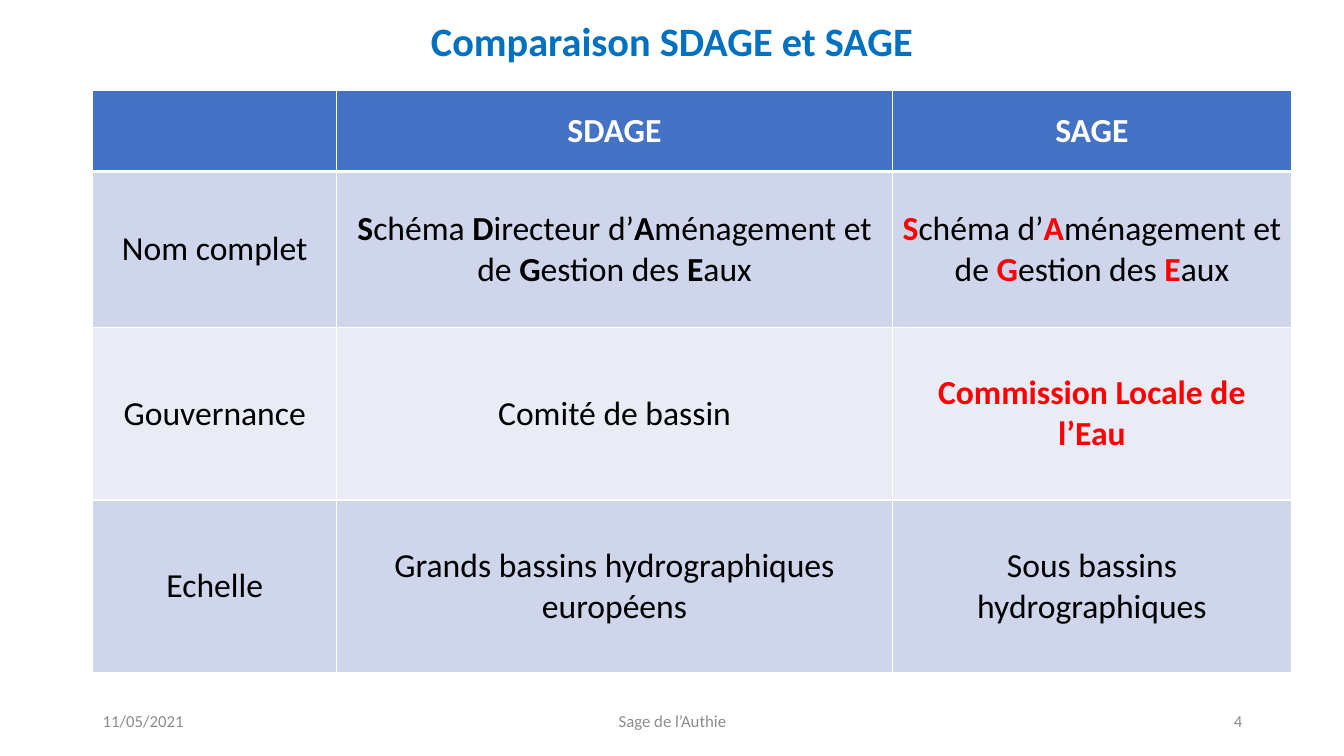
from pptx import Presentation
from pptx.dml.color import RGBColor
from pptx.enum.text import MSO_ANCHOR as Anchor, PP_ALIGN as Align
from pptx.util import Inches, Pt
from pptx.oxml import parse_xml
from pptx.oxml.ns import nsdecls

# Content: text between asterisks is emphasised
TITLE = "Comparaison SDAGE et SAGE"
COMPARISON = [
    ["", "SDAGE", "SAGE"],
    ["Nom complet",
     "*S*chéma *D*irecteur d’*A*ménagement et de *G*estion des *E*aux",
     "*S*chéma d’*A*ménagement et de *G*estion des *E*aux"],
    ["Gouvernance", "Comité de bassin", "*Commission Locale de l’Eau*"],
    ["Echelle", "Grands bassins hydrographiques européens",
     "Sous bassins hydrographiques"],
]
FOOTER = [  # text, left, width, alignment
    ("11/05/2021", 0.92, 3, Align.LEFT),
    ("Sage de l’Authie", 4.42, 4.5, Align.CENTER),
    ("4", 9.42, 3, Align.RIGHT),
]
COLUMN_WIDTHS = [2.42, 5.51, 3.96]
ROW_HEIGHTS = [0.8, 1.55, 1.71, 1.71]
SAGE_COLUMN = 2

THEME = {
    "font": "Calibri",
    "title_size": 28.8, "table_size": 24, "footer_size": 12,
    "title": "0070C0", "footer": "8C8C8C", "text": "000000",
    "accent": "FF0000", "header": "4472C4", "header_text": "FFFFFF",
    "bands": ["E9EBF5", "CFD5EA"], "border": "FFFFFF",
}


def color(key):
    return RGBColor.from_string(THEME[key])


def write(frame, text, size, ink, align, bold=False, accent=None):
    """Fill a frame with one paragraph, emphasising the starred parts."""
    paragraph = frame.paragraphs[0]
    paragraph.alignment = align
    paragraph.font.name = THEME["font"]
    paragraph.font.size = Pt(THEME[size])
    paragraph.font.bold = bold
    paragraph.font.color.rgb = color(ink)
    for index, part in enumerate(text.split("*")):
        if not part:
            continue
        run = paragraph.add_run()
        run.text = part
        if index % 2:
            run.font.bold = True
            run.font.color.rgb = color(accent or ink)


def add_label(slide, text, box, *style, **options):
    frame = slide.shapes.add_textbox(*map(Inches, box)).text_frame
    frame.word_wrap = True
    frame.vertical_anchor = Anchor.MIDDLE
    write(frame, text, *style, **options)


def add_borders(cell, top, bottom):
    properties = cell._tc.get_or_add_tcPr()
    widths = {"lnL": 1, "lnR": 1, "lnT": top, "lnB": bottom}
    for index, (side, width) in enumerate(widths.items()):
        properties.insert(index, parse_xml(
            f'<a:{side} {nsdecls("a")} w="{Pt(width)}"><a:solidFill>'
            f'<a:srgbClr val="{THEME["border"]}"/></a:solidFill></a:{side}>'))


prs = Presentation()
prs.slide_width, prs.slide_height = Inches(13.33), Inches(7.5)
slide = prs.slides.add_slide(prs.slide_layouts[6])

# Footer and title
for text, left, width, align in FOOTER:
    add_label(slide, text, (left, 6.95, width, 0.4), "footer_size", "footer", align)
add_label(slide, TITLE, (0.72, 0.15, 11.89, 0.5), "title_size", "title",
          Align.CENTER, bold=True)

# Comparison table
table = slide.shapes.add_table(
    len(ROW_HEIGHTS), len(COLUMN_WIDTHS), Inches(0.92), Inches(0.9),
    Inches(sum(COLUMN_WIDTHS)), Inches(sum(ROW_HEIGHTS))).table
for column, width in zip(table.columns, COLUMN_WIDTHS):
    column.width = Inches(width)
for table_row, height in zip(table.rows, ROW_HEIGHTS):
    table_row.height = Inches(height)

for row, texts in enumerate(COMPARISON):
    header = row == 0
    fill = THEME["header"] if header else THEME["bands"][row % 2]
    for col, text in enumerate(texts):
        cell = table.cell(row, col)
        cell.vertical_anchor = Anchor.MIDDLE
        cell.fill.solid()
        cell.fill.fore_color.rgb = RGBColor.from_string(fill)
        add_borders(cell, top=3 if row == 1 else 1, bottom=3 if header else 1)
        write(cell.text_frame, text, "table_size",
              "header_text" if header else "text", Align.CENTER, bold=header,
              accent="accent" if col == SAGE_COLUMN else None)

prs.save("out.pptx")
